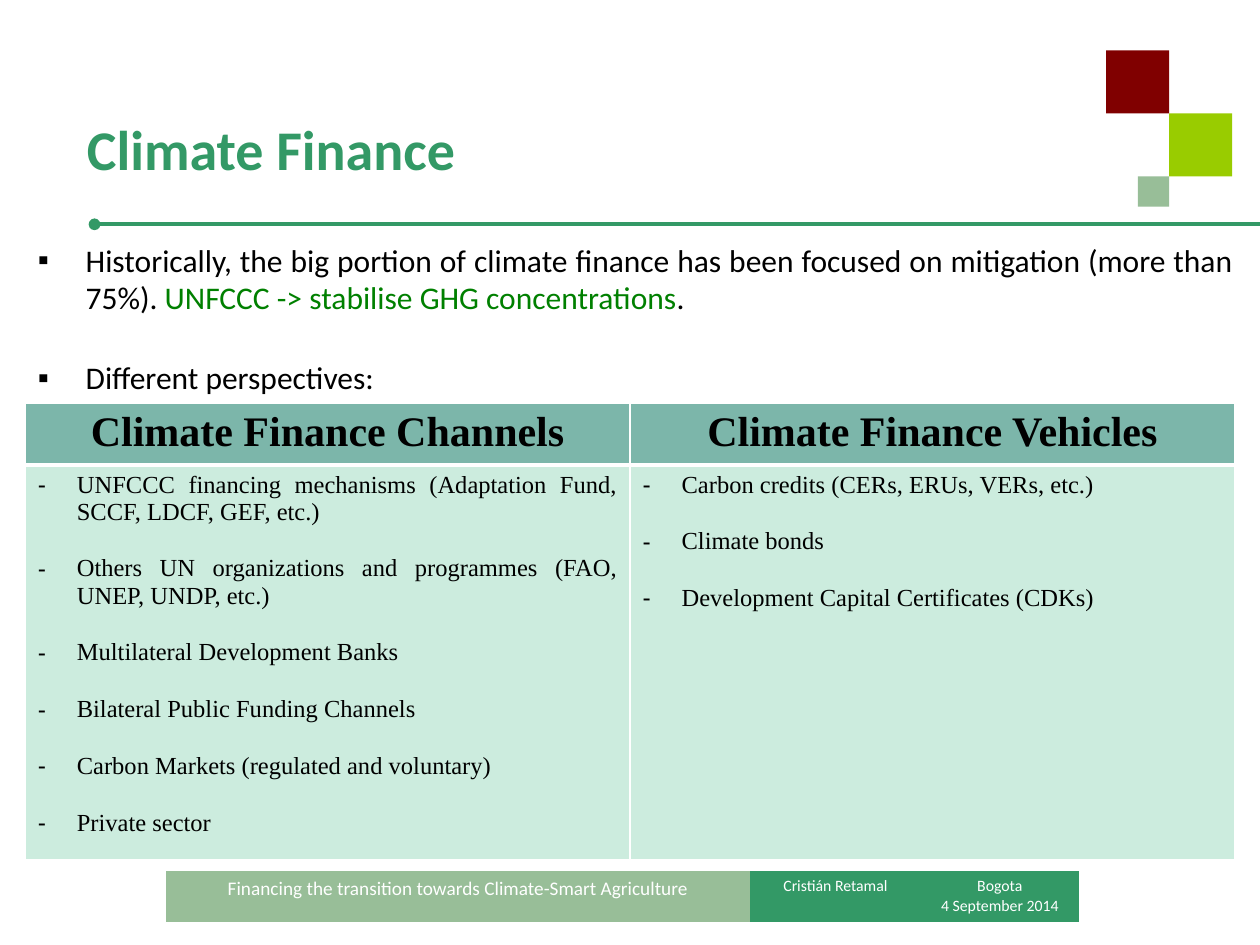
from lxml.etree import SubElement
from pptx import Presentation
from pptx.dml.color import RGBColor
from pptx.enum.shapes import MSO_CONNECTOR as Connector, MSO_SHAPE as Shape
from pptx.enum.text import MSO_ANCHOR as Anchor, MSO_AUTO_SIZE as AutoSize, PP_ALIGN as Align
from pptx.oxml.ns import qn
from pptx.util import Inches, Pt

COLUMNS, ROWS = 100, 75
UNIT = Inches(0.1)
COLORS = {
    "green": "339966", "sage": "98BE98", "lime": "99CC00", "maroon": "800000",
    "accent": "008000", "header": "7CB6AA", "mint": "CCECDE",
    "black": "000000", "white": "FFFFFF",
}
SERIF = "Times New Roman"
CHANNELS = [
    "UNFCCC financing mechanisms (Adaptation Fund, SCCF, LDCF, GEF, etc.)",
    "Others UN organizations and programmes (FAO, UNEP, UNDP, etc.)",
    "Multilateral Development Banks",
    "Bilateral Public Funding Channels",
    "Carbon Markets (regulated and voluntary)",
    "Private sector",
]
VEHICLES = [
    "Carbon credits (CERs, ERUs, VERs, etc.)",
    "Climate bonds",
    "Development Capital Certificates (CDKs)",
]


def grid(*cells):
    return [round(cell * UNIT) for cell in cells]


def color(name):
    return RGBColor.from_string(COLORS[name])


def add_bullet(para, mark, indent):
    props = para._p.get_or_add_pPr()
    props.set("marL", str(Inches(indent)))
    props.set("indent", str(-Inches(indent)))
    SubElement(props, qn("a:buFont"), typeface="Arial")
    SubElement(props, qn("a:buChar"), char=mark)


def write(frame, paragraphs, size=18, font="Calibri", fill="black", bold=False,
          align=Align.LEFT, bullet=None, indent=0, gap=0):
    for index, spans in enumerate(paragraphs):
        para = frame.paragraphs[0] if index == 0 else frame.add_paragraph()
        para.alignment = align
        para.space_before = Pt(gap if index else 0)
        if bullet:
            add_bullet(para, bullet, indent)
        for text, shade in [(spans, fill)] if isinstance(spans, str) else spans:
            span = para.add_run()
            span.text = text
            span.font.size = Pt(size)
            span.font.name = font
            span.font.bold = bold
            span.font.color.rgb = color(shade)


def place(box, *cells):
    box.left, box.top, box.width, box.height = grid(*cells)


def add_square(page, fill, *cells):
    square = page.shapes.add_shape(Shape.RECTANGLE, *grid(*cells))
    square.shadow.inherit = False
    square.fill.solid()
    square.fill.fore_color.rgb = color(fill)
    square.line.fill.background()


def add_rule(page, left, top, right):
    start_x, y, end_x = grid(left, top, right)
    rule = page.shapes.add_connector(Connector.STRAIGHT, start_x, y, end_x, y)
    rule.line.color.rgb = color("green")
    rule.line.width = Pt(2.25)
    SubElement(rule.line._get_or_add_ln(), qn("a:headEnd"), type="oval")
    SubElement(rule._element.spPr, qn("a:effectLst"))


def add_table(page, left, top, widths, heights):
    frame = page.shapes.add_table(len(heights), len(widths),
                                  *grid(left, top, sum(widths), sum(heights)))
    table = frame.table
    table.first_row = table.horz_banding = False
    for column, width in zip(table.columns, grid(*widths)):
        column.width = width
    for row, height in zip(table.rows, grid(*heights)):
        row.height = height
    return table


def paint(cell, fill, **borders):
    props = cell._tc.get_or_add_tcPr()
    for side in "LRTB":
        width = borders.get(side, borders.get("every", 0))
        line = SubElement(props, qn(f"a:ln{side}"), w=str(Pt(width)))
        if width:
            shade = SubElement(line, qn("a:solidFill"))
            SubElement(shade, qn("a:srgbClr"), val=COLORS["white"])
        else:
            SubElement(line, qn("a:noFill"))
    cell.fill.solid()
    cell.fill.fore_color.rgb = color(fill)


def add_footer(page):
    entries = [
        (["Financing the transition towards Climate-Smart Agriculture"], 11, "sage"),
        (["Cristián Retamal"], 9, "green"),
        (["Bogota", "4 September 2014"], 9, "green"),
    ]
    table = add_table(page, 13.2, 69.1, [46.3, 13.6, 12.5], [4])
    for column, (lines, size, fill) in enumerate(entries):
        cell = table.cell(0, column)
        paint(cell, fill)
        write(cell.text_frame, lines, size=size, fill="white", align=Align.CENTER)


def add_comparison(page):
    topics = [("Climate Finance Channels", CHANNELS), ("Climate Finance Vehicles", VEHICLES)]
    table = add_table(page, 2, 32, [48, 48], [4.9, 31.3])
    for column, (heading, items) in enumerate(topics):
        header, body = table.cell(0, column), table.cell(1, column)
        paint(header, "header", every=1, B=3)
        write(header.text_frame, [heading], size=24, font=SERIF, bold=True, align=Align.CENTER)
        paint(body, "mint", every=1, T=3)
        write(body.text_frame, items, size=14, font=SERIF, align=Align.JUSTIFY,
              bullet="-", indent=0.31, gap=17)


def add_title(page):
    title = page.shapes.title
    place(title, 5.9, 9.1, 80.3, 7.7)
    frame = title.text_frame
    frame.auto_size = AutoSize.NONE
    frame.vertical_anchor = Anchor.TOP
    frame.margin_top = 0
    write(frame, ["Climate Finance"], size=32, fill="green", bold=True)


def add_points(page):
    body = page.placeholders[1]
    place(body, 2, 18.6, 96.9, 13.5)
    body.text_frame.auto_size = AutoSize.NONE
    history = [
        ("Historically, the big portion of climate finance has been focused on "
         "mitigation (more than 75%). ", "black"),
        ("UNFCCC -> stabilise GHG concentrations", "accent"),
        (".", "black"),
    ]
    write(body.text_frame, [history, "Different perspectives:"], align=Align.JUSTIFY,
          bullet="▪", indent=0.38, gap=24)


def main():
    deck = Presentation()
    deck.slide_width, deck.slide_height = grid(COLUMNS, ROWS)
    page = deck.slides.add_slide(deck.slide_layouts[1])
    add_rule(page, 7.5, 17.8, COLUMNS)
    add_square(page, "sage", 90.3, 14, 2.5, 2.4)
    add_square(page, "lime", 92.8, 9, 5, 5)
    add_square(page, "maroon", 87.8, 4, 5, 5)
    add_footer(page)
    add_title(page)
    add_points(page)
    add_comparison(page)
    deck.save("out.pptx")


if __name__ == "__main__":
    main()
